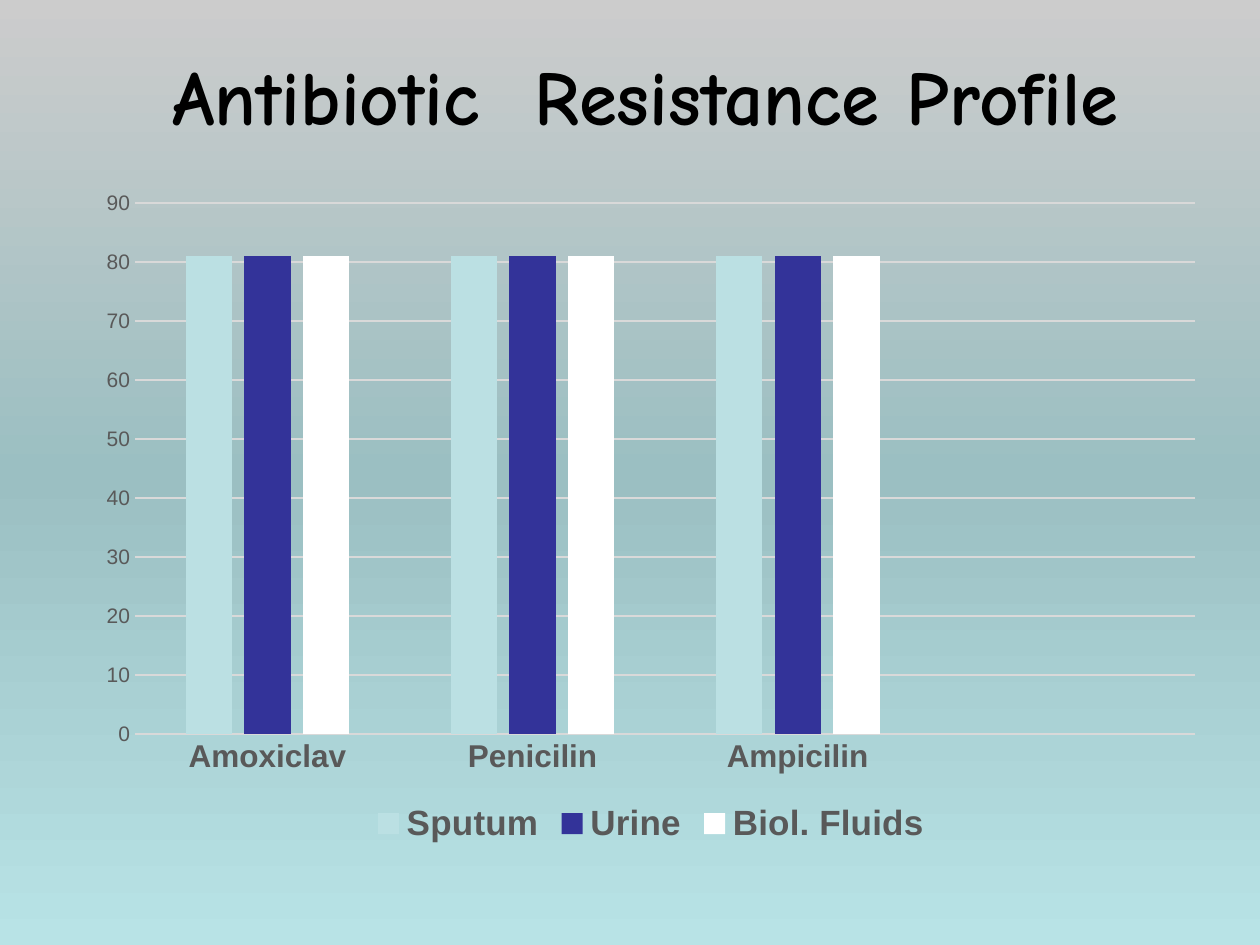
import copy

import pptx
import pptx.chart.data
import pptx.dml.color
import pptx.enum.chart
import pptx.enum.text
import pptx.oxml.ns
import pptx.util

Pt = pptx.util.Pt
RGB = pptx.dml.color.RGBColor

BLACK = RGB(0x00, 0x00, 0x00)
TEXT_GREY = RGB(0x59, 0x59, 0x59)
LINE_GREY = RGB(0xD9, 0xD9, 0xD9)
SERIES_COLORS = [RGB(0xBB, 0xE0, 0xE3), RGB(0x33, 0x33, 0x99), RGB(0xFF, 0xFF, 0xFF)]
BACKGROUND = [RGB(0xCC, 0xCC, 0xCC), RGB(0x9B, 0xBF, 0xC2), RGB(0xB8, 0xE3, 0xE6)]


def set_font(font, size, color, name="Arial", bold=False):
    font.name, font.size, font.bold = name, Pt(size), bold
    font.color.rgb = color


def add_text(tf, text, align=pptx.enum.text.PP_ALIGN.CENTER, **fmt):
    p = tf.paragraphs[0]
    p.alignment = align
    r = p.add_run()
    r.text = text
    set_font(r.font, **fmt)


def set_line(line, color=LINE_GREY, width=0.75):
    line.color.rgb = color
    line.width = Pt(width)


class Deck:
    """Holds the style and the current slide."""

    title_font = dict(size=44, color=BLACK, name="Comic Neue", bold=True)
    category_font = dict(size=18, color=TEXT_GREY, bold=True)
    value_font = dict(size=12, color=TEXT_GREY)
    legend_font = dict(size=20, color=TEXT_GREY, bold=True)

    def __init__(self, width, height):
        self.prs = pptx.Presentation()
        self.prs.slide_width, self.prs.slide_height = Pt(width), Pt(height)
        self.slide = None

    def add_slide(self):
        self.slide = self.prs.slides.add_slide(self.prs.slide_layouts[5])

    def background(self, colors):
        fill = self.slide.background.fill
        fill.gradient()
        fill.gradient_angle = 270
        # The default gradient has two stops; clone more as needed
        first = next(self.slide.element.iter(pptx.oxml.ns.qn("a:gs")))
        for _ in range(len(colors) - len(fill.gradient_stops)):
            first.addnext(copy.deepcopy(first))
        for i, (stop, color) in enumerate(zip(fill.gradient_stops, colors)):
            stop.position = i / (len(colors) - 1)
            stop.color.rgb = color

    def title(self, text, left, top, width, height):
        sp = self.slide.shapes.title
        sp.left, sp.top, sp.width, sp.height = map(Pt, (left, top, width, height))
        tf = sp.text_frame
        tf.word_wrap = True
        tf.vertical_anchor = pptx.enum.text.MSO_ANCHOR.MIDDLE
        add_text(tf, text, **self.title_font)

    def column_chart(self, categories, series, left, top, width, height):
        data = pptx.chart.data.CategoryChartData()
        data.categories = categories
        for name, values in series.items():
            data.add_series(name, values)
        chart = self.slide.shapes.add_chart(
            pptx.enum.chart.XL_CHART_TYPE.COLUMN_CLUSTERED,
            *map(Pt, (left, top, width, height)), data).chart
        chart.has_title = False
        set_font(chart.font, 10, BLACK)

        # Columns
        plot = chart.plots[0]
        plot.gap_width, plot.overlap = 219, -27
        plot.vary_by_categories = False
        for s, color in zip(plot.series, SERIES_COLORS):
            s.format.fill.solid()
            s.format.fill.fore_color.rgb = color
            s.invert_if_negative = False

        # Axes
        cat, val = chart.category_axis, chart.value_axis
        for axis, fmt in ((cat, self.category_font), (val, self.value_font)):
            axis.major_tick_mark = pptx.enum.chart.XL_TICK_MARK.NONE
            axis.minor_tick_mark = pptx.enum.chart.XL_TICK_MARK.NONE
            set_font(axis.tick_labels.font, **fmt)
        set_line(cat.format.line)
        val.format.line.fill.background()
        val.minimum_scale, val.maximum_scale, val.major_unit = 0, 90, 10
        val.has_major_gridlines = True
        set_line(val.major_gridlines.format.line)

        # Legend
        chart.has_legend = True
        chart.legend.position = pptx.enum.chart.XL_LEGEND_POSITION.BOTTOM
        chart.legend.include_in_layout = False
        set_font(chart.legend.font, **self.legend_font)


def main():
    deck = Deck(720, 540)
    deck.add_slide()
    deck.background(BACKGROUND)
    deck.title("Antibiotic  Resistance Profile", 48, 12, 642, 84)

    # The fourth category is an empty slot
    values = [81, 81, 81, None]
    deck.column_chart(
        ["Amoxiclav", "Penicilin", "Ampicilin", ""],
        {name: values for name in ("Sputum", "Urine", "Biol. Fluids")},
        48, 102, 648, 384)
    deck.prs.save("out.pptx")


if __name__ == "__main__":
    main()
